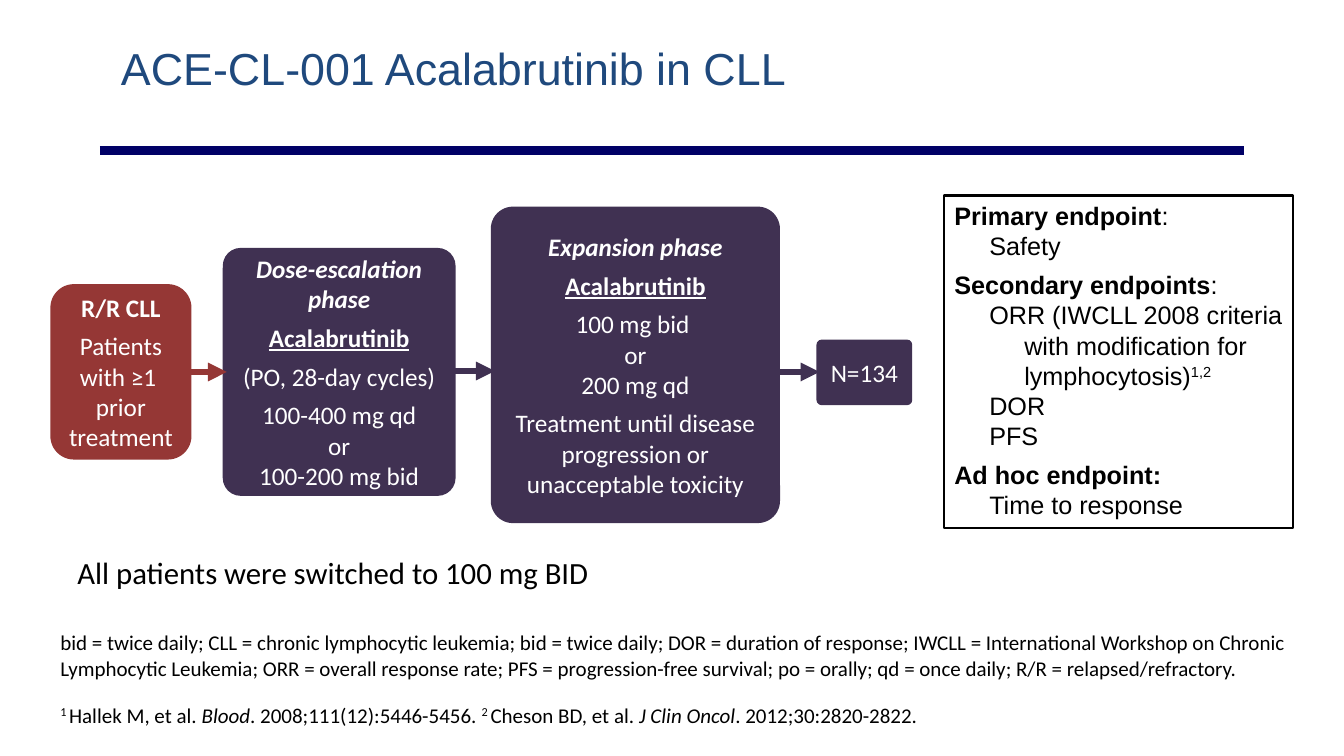
from dataclasses import dataclass

from lxml import etree
from pptx import Presentation
from pptx.dml.color import RGBColor
from pptx.enum import shapes, text
from pptx.oxml import ns
from pptx.util import Pt


@dataclass(frozen=True)
class Theme:
    heading_font: str = "Arial"
    body_font: str = "Calibri"
    title: str = "1F497D"
    rule: str = "000066"
    ink: str = "000000"
    paper: str = "FFFFFF"
    phase: str = "403152"
    patients: str = "953735"
    title_size: float = 32
    remark_size: float = 22
    body_size: float = 18
    note_size: float = 15


THEME = Theme()


def rgb(value):
    return RGBColor.from_string(value)


def points(*lengths):
    return [Pt(length) for length in lengths]


def set_font(p, name, size, color):
    p.font.name = name
    p.font.size = Pt(size)
    p.font.color.rgb = rgb(color)


def add_runs(p, runs):
    for words, style in runs:
        for i, part in enumerate(words.split("\n")):
            if i:
                p.add_line_break()
            r = p.add_run()
            r.text = part
            if "b" in style:
                r.font.bold = True
            if "i" in style:
                r.font.italic = True
            if "u" in style:
                r.font.underline = True
            if "^" in style:
                r._r.get_or_add_rPr().set("baseline", "30000")


def add_paragraph(tf, runs, name, size, color, before=0, after=0, align=text.PP_ALIGN.LEFT):
    p = tf.paragraphs[0] if not tf.paragraphs[0].runs else tf.add_paragraph()
    set_font(p, name, size, color)
    p.alignment = align
    p.space_before = Pt(before)
    p.space_after = Pt(after)
    add_runs(p, runs)
    return p


def add_title(s, words):
    sp = s.shapes.title
    sp.left, sp.top, sp.width, sp.height = points(79.2, 3.6, 648, 90)
    tf = sp.text_frame
    tf.vertical_anchor = text.MSO_ANCHOR.MIDDLE
    add_paragraph(tf, [(words, "")], THEME.heading_font, THEME.title_size, THEME.title)


def add_line(s, x1, x2, y, color, width, arrow=False):
    line = s.shapes.add_connector(shapes.MSO_CONNECTOR.STRAIGHT, *points(x1, y, x2, y))
    line.line.color.rgb = rgb(color)
    line.line.width = Pt(width)
    if arrow:
        ln = line.line._get_or_add_ln()
        etree.SubElement(ln, ns.qn("a:tailEnd"), type="triangle")
    etree.SubElement(line._element.spPr, ns.qn("a:effectLst"))


def add_step(s, box, color, paragraphs, corner=0.077):
    sp = s.shapes.add_shape(shapes.MSO_SHAPE.ROUNDED_RECTANGLE, *points(*box))
    sp.adjustments[0] = corner
    sp.shadow.inherit = False
    sp.fill.solid()
    sp.fill.fore_color.rgb = rgb(color)
    sp.line.fill.background()
    tf = sp.text_frame
    tf.word_wrap = True
    tf.vertical_anchor = text.MSO_ANCHOR.MIDDLE
    tf.margin_left = tf.margin_right = 0
    for words, style, after in paragraphs:
        add_paragraph(tf, [(words, style)], THEME.body_font, THEME.body_size, THEME.paper,
                      after=after, align=text.PP_ALIGN.CENTER)


def add_endpoints(s, box, paragraphs):
    sp = s.shapes.add_shape(shapes.MSO_SHAPE.RECTANGLE, *points(*box))
    sp.shadow.inherit = False
    sp.fill.background()
    sp.line.color.rgb = rgb(THEME.ink)
    sp.line.width = Pt(1.5)
    tf = sp.text_frame
    tf.word_wrap = True
    tf.margin_right = 0
    tf.vertical_anchor = text.MSO_ANCHOR.TOP
    for runs, indented, after in paragraphs:
        p = add_paragraph(tf, runs, THEME.heading_font, THEME.body_size, THEME.ink, after=after)
        if indented:
            pPr = p._p.get_or_add_pPr()
            pPr.set("marL", str(Pt(50)))
            pPr.set("indent", str(Pt(-25)))


def add_text(s, box, size, paragraphs):
    tf = s.shapes.add_textbox(*points(*box)).text_frame
    tf.word_wrap = True
    for runs, before in paragraphs:
        add_paragraph(tf, runs, THEME.body_font, size, THEME.ink, before=before)
    return tf


def main():
    prs = Presentation()
    prs.slide_width, prs.slide_height = points(960, 540)
    s = prs.slides.add_slide(prs.slide_layouts[5])

    add_title(s, "ACE-CL-001 Acalabrutinib in CLL")
    add_line(s, 71.3, 888.5, 107.5, THEME.rule, 6)

    add_endpoints(s, (674.6, 139.7, 249.1, 237.6), [
        ([("Primary endpoint", "b"), (":", "")], False, 0),
        ([("Safety", "")], True, 6),
        ([("Secondary endpoints", "b"), (":", "")], False, 0),
        ([("ORR (IWCLL 2008 criteria\nwith modification for\nlymphocytosis)", ""),
          ("1,2", "^")], True, 0),
        ([("DOR", "")], True, 0),
        ([("PFS", "")], True, 6),
        ([("Ad hoc endpoint:", "b")], False, 0),
        ([("Time to response", "")], True, 0),
    ])

    remark = add_text(s, (48.2, 391.7, 864, 43.2), THEME.remark_size,
                      [([("All patients were switched to 100 mg BID", "")], 3)])
    remark.paragraphs[0].line_spacing = Pt(27)

    add_step(s, (350.6, 147.6, 206.6, 226.1), THEME.phase, [
        ("Expansion phase", "bi", 6),
        ("Acalabrutinib", "bu", 6),
        ("100 mg bid ", "", 0),
        ("or", "", 0),
        ("200 mg qd", "", 6),
        ("Treatment until disease progression or unacceptable toxicity", "", 6),
    ])
    add_step(s, (159.1, 177.1, 166.3, 177.1), THEME.phase, [
        ("Dose-escalation phase", "bi", 6),
        ("Acalabrutinib", "bu", 6),
        ("(PO, 28-day cycles)", "", 6),
        ("100-400 mg qd", "", 0),
        ("or", "", 0),
        ("100-200 mg bid", "", 6),
    ])
    add_step(s, (36, 203, 100.8, 125.3), THEME.patients, [
        ("R/R CLL", "b", 6),
        ("Patients with ≥1 \nprior treatment", "", 6),
    ], corner=0.167)
    add_step(s, (583.2, 242.6, 68.4, 46.8), THEME.phase, [("N=134", "", 6)])

    for x1, x2, y, color in (
        (118.1, 162, 265.7, THEME.patients),
        (310.3, 353.5, 265, THEME.phase),
        (542.2, 585.4, 265.7, THEME.phase),
    ):
        add_line(s, x1, x2, y, color, 4.5, arrow=True)

    add_text(s, (36, 446.4, 900, 80), THEME.note_size, [
        ([("bid = twice daily; CLL = chronic lymphocytic leukemia; bid = twice daily; "
           "DOR = duration of response; IWCLL = International Workshop on Chronic "
           "Lymphocytic Leukemia; ORR = overall response rate; PFS = progression-free "
           "survival; po = orally; qd = once daily; R/R = relapsed/refractory.", "")], 3),
        ([("1 ", "^"), ("Hallek M, et al. ", ""), ("Blood", "i"),
          (". 2008;111(12):5446-5456. ", ""), ("2 ", "^"), ("Cheson BD, et al. ", ""),
          ("J Clin Oncol", "i"), (". 2012;30:2820-2822.", "")], 15.6),
    ])

    prs.save("out.pptx")


if __name__ == "__main__":
    main()
